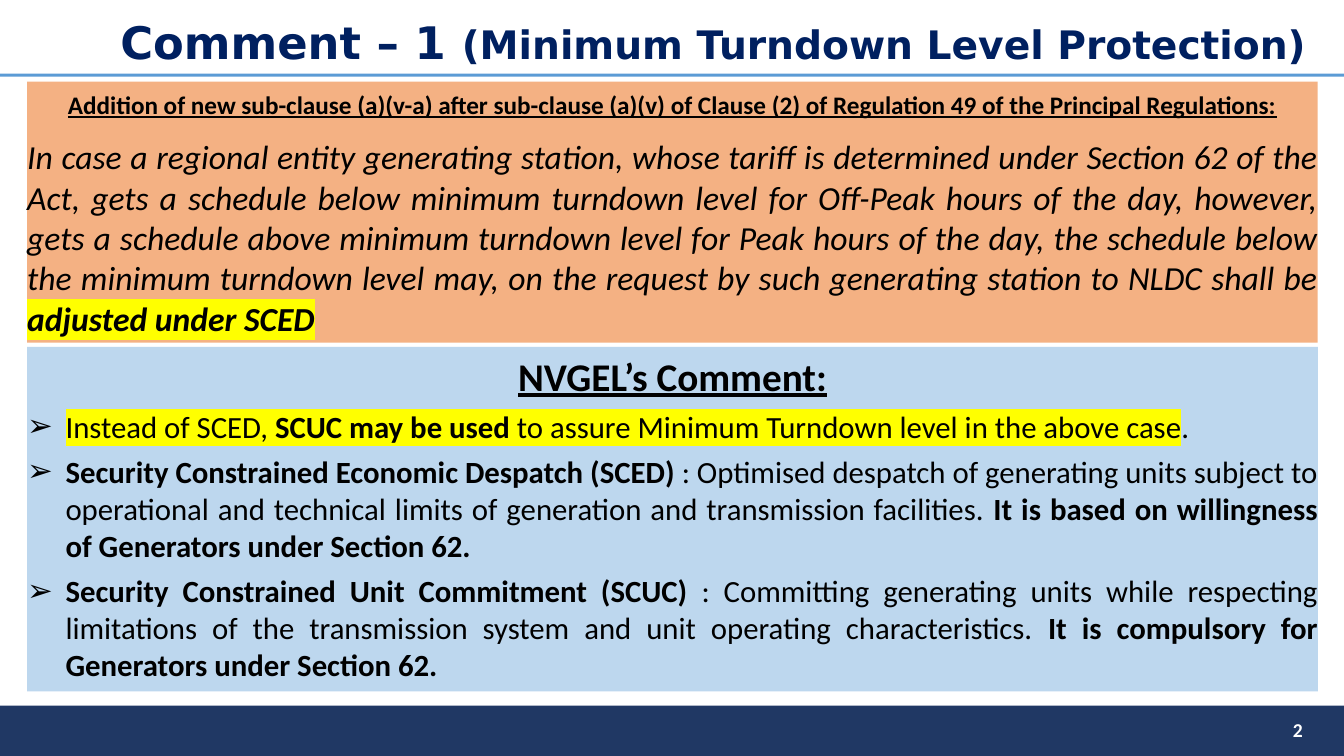
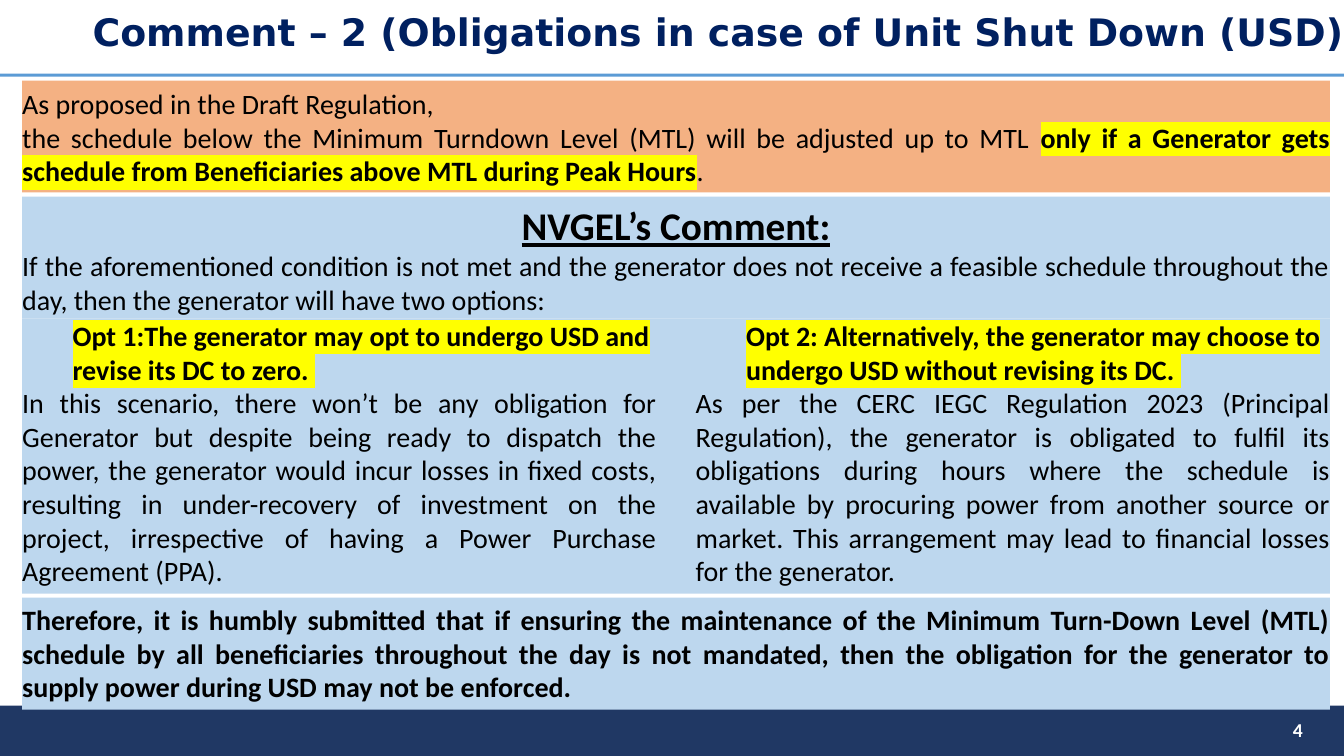
"""Build two slides of comments on draft grid regulations."""
from dataclasses import dataclass

from lxml import etree
from pptx import Presentation
from pptx.dml.color import RGBColor
from pptx.enum import shapes, text
from pptx.oxml import ns
from pptx.util import Emu, Inches, Pt

COLORS = {
    "band": "203864",
    "rule": "5B9BD5",
    "title": "002060",
    "proposal": "F4B183",
    "comment": "BDD7EE",
    "marker": "FFFF00",
    "ink": "000000",
    "white": "FFFFFF",
}
BODY_FONT = "Calibri"
TITLE_FONT = "DejaVu Sans"
ALIGN = text.PP_ALIGN
ANCHOR = text.MSO_ANCHOR
WIDTH, HEIGHT = 13.33, 7.5
BULLET_INDENT = 0.38


@dataclass
class Span:
    """Words that differ from the rest of their paragraph."""

    words: str
    bold: bool | None = None
    marked: bool = False
    size: float | None = None


@dataclass
class Para:
    """A paragraph with one base format."""

    spans: list
    size: float = 20
    align: ALIGN = ALIGN.JUSTIFY
    before: float = 0
    indent: float = 0
    bullet: str = ""
    bold: bool = False
    italic: bool = False
    underline: bool = False
    font: str = BODY_FONT
    color: str = "ink"


def rgb(name):
    """Return a palette colour."""
    return RGBColor.from_string(COLORS[name])


def add_child(parent, tag, **attributes):
    """Append a DrawingML element."""
    return etree.SubElement(parent, ns.qn(tag), **attributes)


def place(box, left, top, width, height):
    """Set the position and size of a box in inches."""
    box.left, box.top = Inches(left), Inches(top)
    box.width, box.height = Inches(width), Inches(height)


def set_bullet(para, indent, bullet):
    """Give a paragraph its indent and its bullet or none."""
    props = para._p.get_or_add_pPr()
    props.set("marL", str(Inches(indent)))
    props.set("indent", str(-Inches(indent) if bullet else 0))
    if bullet:
        add_child(props, "a:buFont", typeface="Arial")
        add_child(props, "a:buChar", char=bullet)
    else:
        add_child(props, "a:buNone")


def add_span(para, span):
    """Add a run with its own weight, size and marker colour."""
    run = para.add_run()
    run.text = span.words
    if span.bold is not None:
        run.font.bold = span.bold
    if span.size:
        run.font.size = Pt(span.size)
    if span.marked:
        highlight = add_child(run._r.get_or_add_rPr(), "a:highlight")
        add_child(highlight, "a:srgbClr", val=COLORS["marker"])


def write(frame, paras):
    """Fill a text frame with paragraphs."""
    for index, content in enumerate(paras):
        para = frame.add_paragraph() if index else frame.paragraphs[0]
        para.alignment = content.align
        para.space_before = Pt(content.before)
        set_bullet(para, content.indent, content.bullet)
        font = para.font
        font.name, font.size = content.font, Pt(content.size)
        font.bold, font.italic = content.bold, content.italic
        font.underline = content.underline
        font.color.rgb = rgb(content.color)
        for span in content.spans:
            add_span(para, Span(span) if isinstance(span, str) else span)


def set_title(page, spans, size, bounds):
    """Place and write the title placeholder."""
    title = page.shapes.title
    place(title, *bounds)
    frame = title.text_frame
    frame.word_wrap = True
    frame.auto_size = text.MSO_AUTO_SIZE.NONE
    frame.vertical_anchor = ANCHOR.MIDDLE
    frame.margin_left = frame.margin_right = Emu(0)
    frame.margin_top = frame.margin_bottom = Emu(0)
    write(frame, [Para(spans, size, ALIGN.CENTER, bold=True,
                       font=TITLE_FONT, color="title")])


def add_number(page, number):
    """Write the page number on the bottom band."""
    box = page.shapes.add_textbox(Inches(10.02), Inches(7.04), Inches(3), Inches(0.4))
    box.text_frame.word_wrap = True
    box.text_frame.vertical_anchor = ANCHOR.MIDDLE
    write(box.text_frame, [Para([number], 14, ALIGN.RIGHT, bold=True, color="white")])


def fill_panel(box, color, bounds, paras, anchor=ANCHOR.TOP, top=0.05, bottom=0.05):
    """Colour, place and write a panel without side margins."""
    place(box, *bounds)
    box.fill.solid()
    box.fill.fore_color.rgb = rgb(color)
    frame = box.text_frame
    frame.word_wrap = True
    frame.auto_size = text.MSO_AUTO_SIZE.NONE
    frame.vertical_anchor = anchor
    frame.margin_left = frame.margin_right = Emu(0)
    frame.margin_top, frame.margin_bottom = Inches(top), Inches(bottom)
    write(frame, paras)


def add_panel(page, color, bounds, paras, **layout):
    """Add a coloured text panel."""
    box = page.shapes.add_textbox(0, 0, 0, 0)
    fill_panel(box, color, bounds, paras, **layout)
    return box


def set_columns(box, count, gap):
    """Split the text of a box into columns."""
    props = box.text_frame._txBody.bodyPr
    props.set("numCol", str(count))
    props.set("spcCol", str(Inches(gap)))


def add_master_bars(deck, page):
    """Put the bottom band and the title rule on the slide master."""
    tree = deck.slide_master.shapes.element
    bars = [("band", 7, 0.5), ("rule", 0.73, 0.03)]
    for number, (color, top, height) in enumerate(bars, 101):
        bar = page.shapes.add_shape(
            shapes.MSO_SHAPE.RECTANGLE, 0, Inches(top), Inches(WIDTH), Inches(height))
        bar.shadow.inherit = False
        bar.fill.solid()
        bar.fill.fore_color.rgb = rgb(color)
        bar.line.fill.background()
        bar.element.nvSpPr.cNvPr.set("id", str(number))
        tree.insert(2, bar.element)


def comment_heading():
    """Return the heading of a comment panel."""
    return Para(["NVGEL’s Comment:"], 28, ALIGN.CENTER, bold=True, underline=True)


def comment_bullet(*spans):
    """Return a bulleted paragraph of a comment panel."""
    return Para(spans, 22, before=6, indent=BULLET_INDENT, bullet="➢")


def option(words):
    """Return the marked heading of an option."""
    return Para([Span(words, marked=True)], align=ALIGN.LEFT, indent=0.5, bold=True)


def build_turndown(page):
    """Build the page on minimum turndown level protection."""
    set_title(page, ["Comment – 1 ", Span("(Minimum Turndown Level Protection)", size=28)],
              32, (0.89, 0.06, 12.36, 0.7))
    add_panel(page, "proposal", (0.27, 0.81, 12.8, 2.59), [
        Para(["Addition of new sub-clause (a)(v-a) after sub-clause (a)(v) of Clause (2) "
              "of Regulation 49 of the Principal Regulations:"],
             18, ALIGN.CENTER, bold=True, underline=True),
        Para(["In case a regional entity generating station, whose tariff is determined "
              "under Section 62 of the Act, gets a schedule below minimum turndown level "
              "for Off-Peak hours of the day, however, gets a schedule above minimum "
              "turndown level for Peak hours of the day, the schedule below the minimum "
              "turndown level may, on the request by such generating station to NLDC "
              "shall be ",
              Span("adjusted under SCED", bold=True, marked=True)],
             24, before=12, italic=True),
    ], anchor=ANCHOR.BOTTOM)
    fill_panel(page.placeholders[1], "comment", (0.27, 3.44, 12.8, 3.42), [
        comment_heading(),
        comment_bullet(
            Span("Instead of SCED, ", marked=True),
            Span("SCUC may be used", bold=True, marked=True),
            Span(" to assure Minimum Turndown level in the above case", marked=True),
            "."),
        comment_bullet(
            Span("Security Constrained Economic Despatch (SCED) ", bold=True),
            ": Optimised despatch of generating units subject to operational and "
            "technical limits of generation and transmission facilities. ",
            Span("It is based on willingness of Generators under Section 62.", bold=True)),
        comment_bullet(
            Span("Security Constrained Unit Commitment (SCUC) ", bold=True),
            ": Committing generating units while respecting limitations of the "
            "transmission system and unit operating characteristics. ",
            Span("It is compulsory for Generators under Section 62.", bold=True)),
    ])
    add_number(page, "2")


def build_shutdown(page):
    """Build the page on obligations during unit shut down."""
    set_title(page, ["Comment – 2 (Obligations in case of Unit Shut Down (USD)"],
              27, (0.57, -0.04, 13.1, 0.7))
    add_panel(page, "proposal", (0.22, 0.8, 12.97, 1.11), [
        Para(["As proposed in the Draft Regulation, "]),
        Para(["the schedule below the Minimum Turndown Level (MTL) will be adjusted up "
              "to MTL ",
              Span("only if a Generator gets", bold=True, marked=True),
              Span(" ", bold=True),
              Span("schedule from Beneficiaries above MTL during Peak Hours",
                   bold=True, marked=True),
              "."]),
    ], anchor=ANCHOR.BOTTOM)
    add_panel(page, "comment", (0.22, 1.95, 12.97, 1.21), [
        comment_heading(),
        Para(["If the aforementioned condition is not met and the generator does not "
              "receive a feasible schedule throughout the day, then the generator will "
              "have two options: "]),
    ], bottom=0)
    options = add_panel(page, "comment", (0.22, 3.16, 12.97, 2.73), [
        option("Opt 1:The generator may opt to undergo USD and revise its DC to zero. "),
        Para(["In this scenario, there won’t be any obligation for Generator but despite "
              "being ready to dispatch the power, the generator would incur losses in "
              "fixed costs, resulting in under-recovery of investment on the project, "
              "irrespective of having a Power Purchase Agreement (PPA)."]),
        option("Opt 2: Alternatively, the generator may choose to undergo USD without "
               "revising its DC. "),
        Para(["As per the CERC IEGC Regulation 2023 (Principal Regulation), the generator "
              "is obligated to fulfil its obligations during hours where the schedule is "
              "available by procuring power from another source or market. This "
              "arrangement may lead to financial losses for the generator. "]),
    ], top=0, bottom=0)
    set_columns(options, 2, 0.39)
    add_panel(page, "comment", (0.22, 5.93, 12.97, 1.11), [
        Para(["Therefore, it is humbly submitted that if ensuring the maintenance of the "
              "Minimum Turn-Down Level (MTL) schedule by all beneficiaries throughout the "
              "day is not mandated, then the obligation for the generator to supply power "
              "during USD may not be enforced."], bold=True),
    ])
    add_number(page, "4")


def main():
    """Build and save the deck."""
    deck = Presentation()
    deck.slide_width, deck.slide_height = Inches(WIDTH), Inches(HEIGHT)
    turndown = deck.slides.add_slide(deck.slide_layouts.get_by_name("Title and Content"))
    shutdown = deck.slides.add_slide(deck.slide_layouts.get_by_name("Title Only"))
    add_master_bars(deck, turndown)
    build_turndown(turndown)
    build_shutdown(shutdown)
    deck.save("out.pptx")


if __name__ == "__main__":
    main()
